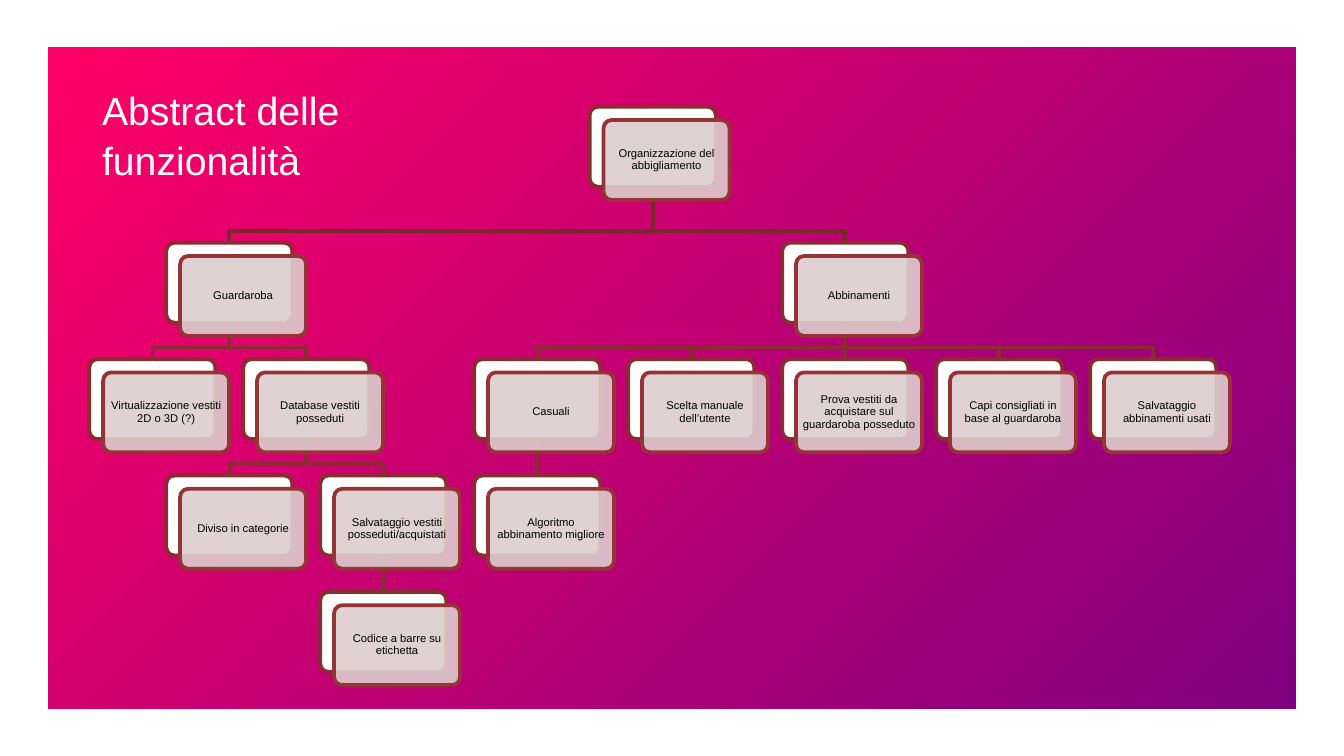
from lxml import etree
from pptx import Presentation
from pptx.dml.color import RGBColor
from pptx.enum.shapes import MSO_CONNECTOR, MSO_SHAPE
from pptx.enum.text import MSO_ANCHOR, PP_ALIGN
from pptx.oxml.ns import qn
from pptx.util import Cm, Pt

COLORS = {
    "start": "FF0066", "end": "800080",
    "white": "FFFFFF", "black": "000000",
    "card": "DDCECE", "card_line": "963334",
    "line": "882E2F", "root_link": "78292A",
}

# Tree: key -> (label, column, row, parent)
NODES = {
    "root": ("Organizzazione del abbigliamento", 3.25, 0, None),
    "wardrobe": ("Guardaroba", 0.5, 1, "root"),
    "virtual": ("Virtualizzazione vestiti 2D o 3D (?)", 0, 2, "wardrobe"),
    "database": ("Database vestiti posseduti", 1, 2, "wardrobe"),
    "categories": ("Diviso in categorie", 0.5, 3, "database"),
    "saved": ("Salvataggio vestiti posseduti/acquistati", 1.5, 3, "database"),
    "barcode": ("Codice a barre su etichetta", 1.5, 4, "saved"),
    "outfits": ("Abbinamenti", 4.5, 1, "root"),
    "casual": ("Casuali", 2.5, 2, "outfits"),
    "algorithm": ("Algoritmo abbinamento migliore", 2.5, 3, "casual"),
    "manual": ("Scelta manuale dell’utente", 3.5, 2, "outfits"),
    "trial": ("Prova vestiti da acquistare sul guardaroba posseduto",
              4.5, 2, "outfits"),
    "advice": ("Capi consigliati in base al guardaroba", 5.5, 2, "outfits"),
    "used": ("Salvataggio abbinamenti usati", 6.5, 2, "outfits"),
}

# Grid in cm
LEFT, COL_STEP = 1.69, 2.91
ROW_TOPS = [2.02] + [4.59 + 2.2 * i for i in range(4)]
BOX_W, BOX_H = 2.38, 1.51
SHIFT_X, SHIFT_Y = 0.26, 0.25
BEND = 0.22


def rgb(name):
    return RGBColor.from_string(COLORS[name])


def add_box(x, y, fill, line):
    sp = s.shapes.add_shape(MSO_SHAPE.ROUNDED_RECTANGLE,
                            Cm(x), Cm(y), Cm(BOX_W), Cm(BOX_H))
    sp.adjustments[0] = 0.1
    sp.shadow.inherit = False
    sp.fill.solid()
    sp.fill.fore_color.rgb = rgb(fill)
    sp.line.color.rgb = rgb(line)
    sp.line.width = Pt(2)
    return sp


prs = Presentation()
prs.slide_width, prs.slide_height = Cm(25.4), Cm(14.29)
s = prs.slides.add_slide(prs.slide_layouts[6])

# Gradient panel
panel = s.shapes.add_shape(MSO_SHAPE.RECTANGLE,
                           Cm(0.91), Cm(0.89), Cm(23.58), Cm(12.51))
panel.shadow.inherit = False
panel.line.fill.background()
panel.fill.gradient()
panel.fill.gradient_angle = 315
for stop, name, pos in zip(panel.fill.gradient_stops, ("start", "end"), (0, 1)):
    stop.color.rgb = rgb(name)
    stop.position = pos

# Links, from the bottom of the parent to the top of the child
for label, col, row, parent in NODES.values():
    if parent is None:
        continue
    _, parent_col, parent_row, _ = NODES[parent]
    x1 = Cm(LEFT + COL_STEP * parent_col + BOX_W / 2)
    y1 = Cm(ROW_TOPS[parent_row] + BOX_H)
    x2 = Cm(LEFT + COL_STEP * col + BOX_W / 2)
    y2 = Cm(ROW_TOPS[row])
    if col == parent_col:
        link = s.shapes.add_connector(MSO_CONNECTOR.STRAIGHT, x1, y1, x2, y2)
        etree.SubElement(link._element.spPr, qn("a:effectLst"))
    else:
        bend = y2 - Cm(BEND)
        fb = s.shapes.build_freeform(x1, y1)
        fb.add_line_segments([(x1, bend), (x2, bend), (x2, y2)], close=False)
        link = fb.convert_to_shape()
        link.shadow.inherit = False
        link.fill.background()
    link.line.color.rgb = rgb("root_link" if parent == "root" else "line")
    link.line.width = Pt(2)

# Boxes: white back plate and translucent front card with the label
for label, col, row, parent in NODES.values():
    x, y = LEFT + COL_STEP * col, ROW_TOPS[row]
    add_box(x, y, "white", "line")
    card = add_box(x + SHIFT_X, y + SHIFT_Y, "card", "card_line")
    color = card._element.spPr.find(qn("a:solidFill")).find(qn("a:srgbClr"))
    etree.SubElement(color, qn("a:alpha"), val="90000")
    tf = card.text_frame
    tf.word_wrap = True
    tf.vertical_anchor = MSO_ANCHOR.MIDDLE
    tf.margin_left = tf.margin_right = Cm(0.07)
    tf.margin_top = tf.margin_bottom = Cm(0.07)
    p = tf.paragraphs[0]
    p.alignment = PP_ALIGN.CENTER
    p.line_spacing = 0.9
    r = p.add_run()
    r.text = label
    r.font.name, r.font.size = "Arial", Pt(6)
    r.font.color.rgb = rgb("black")

# Title
title = s.shapes.add_textbox(Cm(1.68), Cm(1.47), Cm(7.65), Cm(2.06))
tf = title.text_frame
tf.word_wrap = True
p = tf.paragraphs[0]
p.line_spacing = 1.05
r = p.add_run()
r.text = "Abstract delle funzionalità"
r.font.name, r.font.size = "Arial", Pt(21)
r.font.color.rgb = rgb("white")

prs.save("out.pptx")
